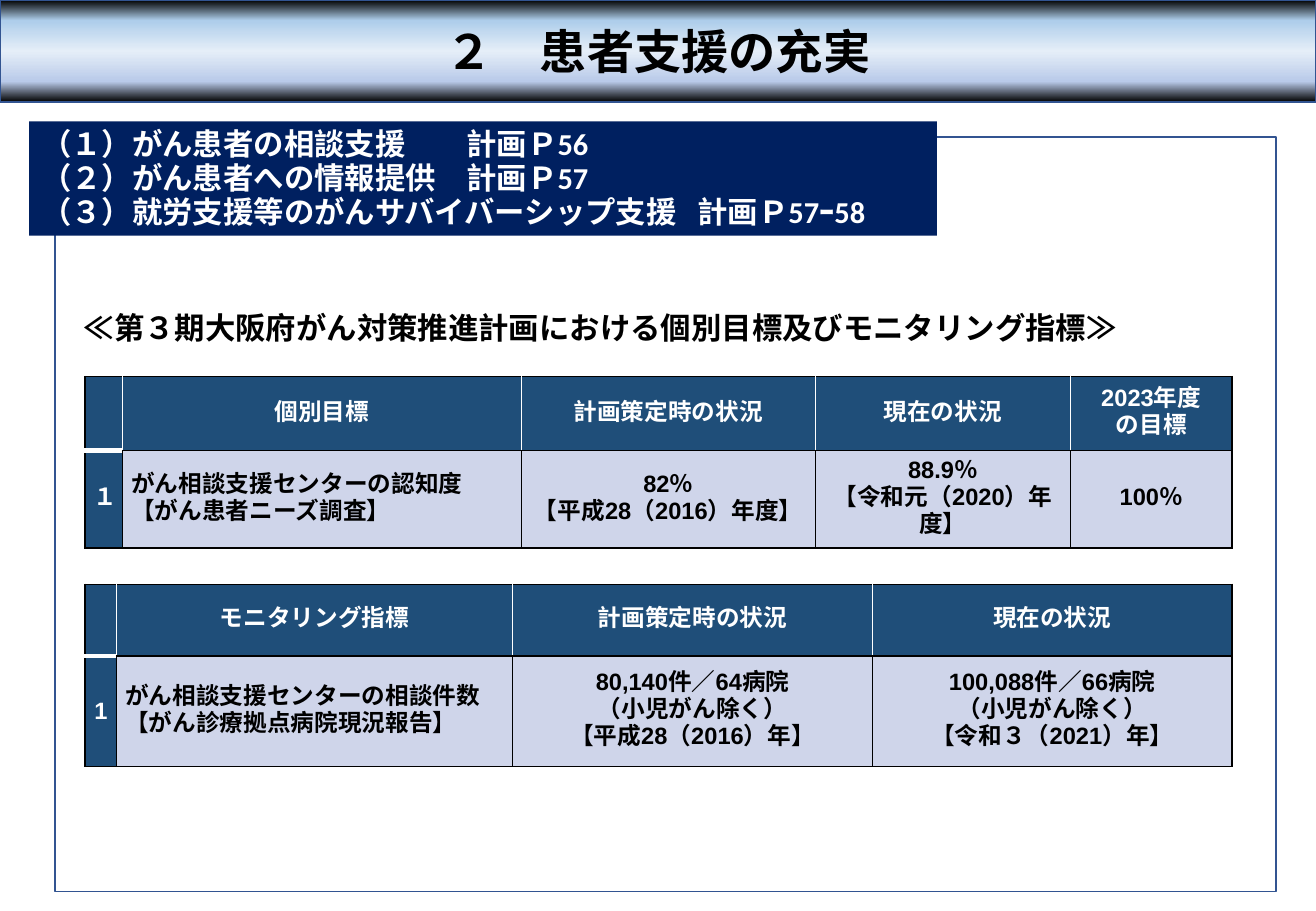
from lxml import etree
from pptx import Presentation
from pptx.dml.color import RGBColor
from pptx.enum.shapes import MSO_SHAPE
from pptx.enum.text import MSO_ANCHOR, MSO_AUTO_SIZE, PP_ALIGN
from pptx.oxml.ns import qn
from pptx.util import Inches, Pt

COLORS = {
    "black": "000000", "white": "FFFFFF", "frame": "325491", "banner": "002060",
    "header": "1F4E79", "body": "CFD5EA", "sky": "ADCDEA", "pale": "E5EEF8", "mist": "B9CAE9",
}
TITLE_STOPS = [(0, "black"), (20, "sky"), (50, "pale"), (80, "mist"), (100, "black")]
TOPICS = [
    "（１）がん患者の相談支援　　計画Ｐ56",
    "（２）がん患者への情報提供　計画Ｐ57",
    "（３）就労支援等のがんサバイバーシップ支援   計画Ｐ57ｰ58",
]
HEADING = "≪第３期大阪府がん対策推進計画における個別目標及びモニタリング指標≫"
GOALS = [
    ["", "個別目標", "計画策定時の状況", "現在の状況", "2023年度\nの目標"],
    ["１", "がん相談支援センターの認知度\n【がん患者ニーズ調査】", "82％\n【平成28（2016）年度】",
     "88.9％\n【令和元（2020）年度】", "100％"],
]
INDICATORS = [
    ["", "モニタリング指標", "計画策定時の状況", "現在の状況"],
    ["1", "がん相談支援センターの相談件数\n【がん診療拠点病院現況報告】",
     "80,140件／64病院\n（小児がん除く）\n【平成28（2016）年】",
     "100,088件／66病院\n（小児がん除く）\n【令和３（2021）年】"],
]


def rgb(name):
    """Return the named colour."""
    return RGBColor.from_string(COLORS[name])


def write(tf, text, size, font, color, align=PP_ALIGN.LEFT, spacing=None):
    """Fill a text frame with one bold paragraph per line of text."""
    tf.word_wrap = True
    tf.text = text
    for p in tf.paragraphs:
        p.alignment = align
        if spacing:
            p.line_spacing = Pt(spacing)
        p.font.size = Pt(size)
        p.font.name = font
        p.font.bold = True
        p.font.color.rgb = rgb(color)


def set_gradient(fill, stops):
    """Give a fill a top-to-bottom gradient with the listed stops."""
    fill.gradient()
    fill.gradient_angle = 270
    gs_lst = fill._fill._gradFill.find(qn("a:gsLst"))
    for gs in list(gs_lst):
        gs_lst.remove(gs)
    for pos, color in stops:
        gs = etree.SubElement(gs_lst, qn("a:gs"), pos=str(pos * 1000))
        etree.SubElement(gs, qn("a:srgbClr"), val=COLORS[color])


def set_borders(cell, borders):
    """Draw the cell borders given as side: (colour, points)."""
    tc_pr = cell._tc.get_or_add_tcPr()
    for side in "LRTB":
        color, width = borders[side]
        ln = etree.SubElement(tc_pr, qn(f"a:ln{side}"), w=str(Pt(width)))
        fill = etree.SubElement(ln, qn("a:solidFill"))
        etree.SubElement(fill, qn("a:srgbClr"), val=COLORS[color])


def add_title(s, left, top, width, height):
    """Turn the title placeholder into the gradient title bar."""
    sp = s.shapes.title
    sp.left, sp.top, sp.width, sp.height = map(Inches, (left, top, width, height))
    set_gradient(sp.fill, TITLE_STOPS)
    sp.line.color.rgb = rgb("frame")
    sp.line.width = Pt(1)
    tf = sp.text_frame
    write(tf, "２　患者支援の充実", 28, "Noto Sans CJK JP", "black", PP_ALIGN.CENTER)
    tf.auto_size = MSO_AUTO_SIZE.NONE
    tf.vertical_anchor = MSO_ANCHOR.MIDDLE


def add_box(s, left, top, width, height, fill, line=None):
    """Add a plain rectangle and return it."""
    sp = s.shapes.add_shape(MSO_SHAPE.RECTANGLE, *map(Inches, (left, top, width, height)))
    sp.shadow.inherit = False
    sp.fill.solid()
    sp.fill.fore_color.rgb = rgb(fill)
    if line:
        sp.line.color.rgb = rgb(line)
        sp.line.width = Pt(1)
    else:
        sp.line.fill.background()
    return sp


def add_banner(s, left, top, width, height):
    """Add the dark banner listing the plan topics."""
    tf = add_box(s, left, top, width, height, "banner").text_frame
    tf.vertical_anchor = MSO_ANCHOR.MIDDLE
    write(tf, "\n".join(TOPICS), 18, "Calibri", "white", spacing=20)


def add_heading(s, left, top, width, height):
    """Add the heading above the tables."""
    tb = s.shapes.add_textbox(*map(Inches, (left, top, width, height)))
    write(tb.text_frame, HEADING, 18, "Calibri", "black")


def cell_borders(row, col, last):
    """Return the borders of a cell: white rules inside the header, black elsewhere."""
    borders = dict.fromkeys("LRTB", ("black", 1))
    if row == 0 and col > 0:
        borders["L"] = ("white", 1)
    if row == 0 and col < last:
        borders["R"] = ("white", 1)
    if col == 0:
        borders["T" if row else "B"] = ("white", 3)
    if (row, col) == (0, 0):
        borders["T"] = ("black", 1)
    return borders


def add_status_table(s, left, top, cols, rows, data):
    """Add a table with a dark header row and a dark number column."""
    box = map(Inches, (left, top, sum(cols), sum(rows)))
    table = s.shapes.add_table(len(rows), len(cols), *box).table
    for column, width in zip(table.columns, cols):
        column.width = Inches(width)
    for i, height in enumerate(rows):
        table.rows[i].height = Inches(height)
        for j, text in enumerate(data[i]):
            cell = table.cell(i, j)
            dark = i == 0 or j == 0
            set_borders(cell, cell_borders(i, j, len(cols) - 1))
            cell.fill.solid()
            cell.fill.fore_color.rgb = rgb("header" if dark else "body")
            cell.vertical_anchor = MSO_ANCHOR.MIDDLE
            cell.margin_left = cell.margin_right = Inches(0.07)
            cell.margin_top = cell.margin_bottom = 0
            align = PP_ALIGN.LEFT if i and j == 1 else PP_ALIGN.CENTER
            write(cell.text_frame, text, 14, "Arial", "white" if dark else "black", align, 16)


def main():
    """Build the slide and save it."""
    prs = Presentation()
    prs.slide_width, prs.slide_height = Inches(10.83), Inches(7.5)
    s = prs.slides.add_slide(prs.slide_layouts[5])
    add_title(s, 0, 0, 10.83, 0.84)
    add_box(s, 0.45, 1.13, 10.05, 6.21, "white", "frame")
    add_banner(s, 0.24, 1, 7.47, 0.94)
    add_heading(s, 0.59, 2.5, 8.89, 0.4)
    add_status_table(s, 0.7, 3.1, [0.31, 3.28, 2.42, 2.1, 1.33], [0.61, 0.8], GOALS)
    add_status_table(s, 0.7, 4.81, [0.26, 3.26, 2.96, 2.96], [0.59, 0.91], INDICATORS)
    prs.save("out.pptx")


if __name__ == "__main__":
    main()
